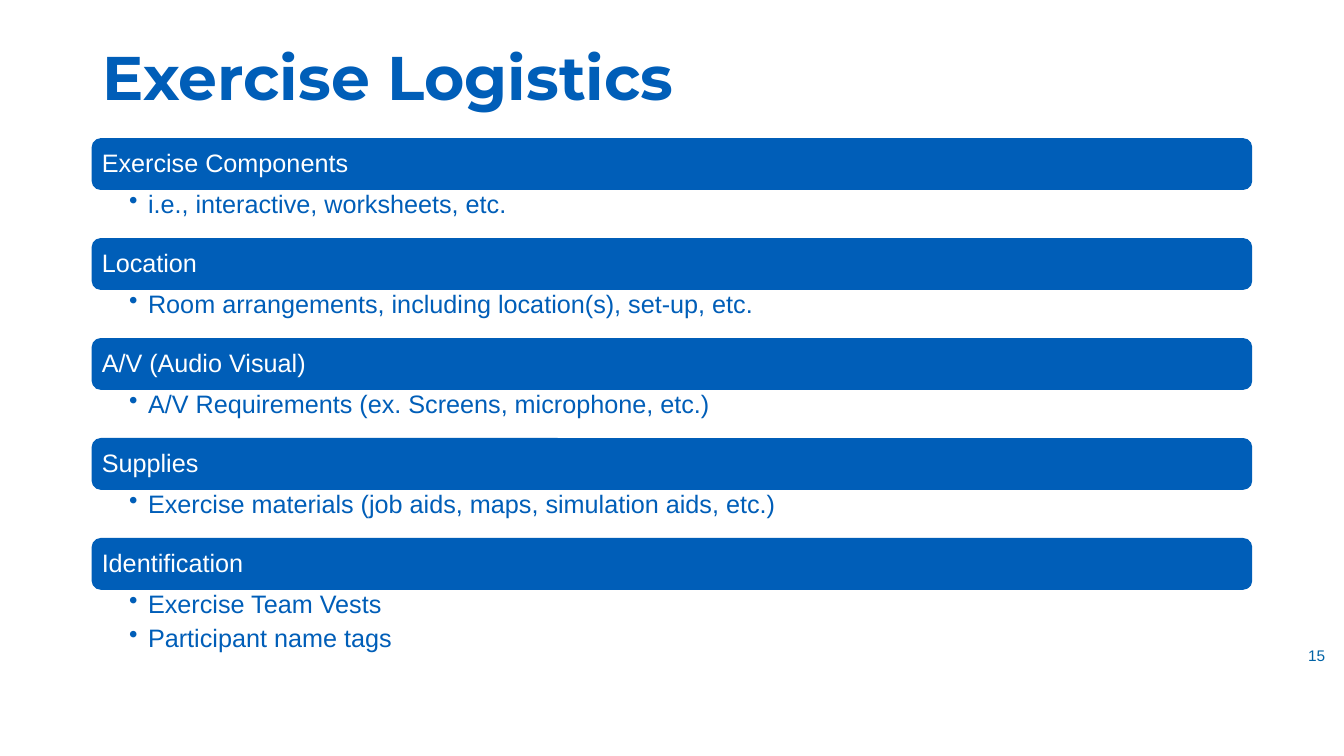
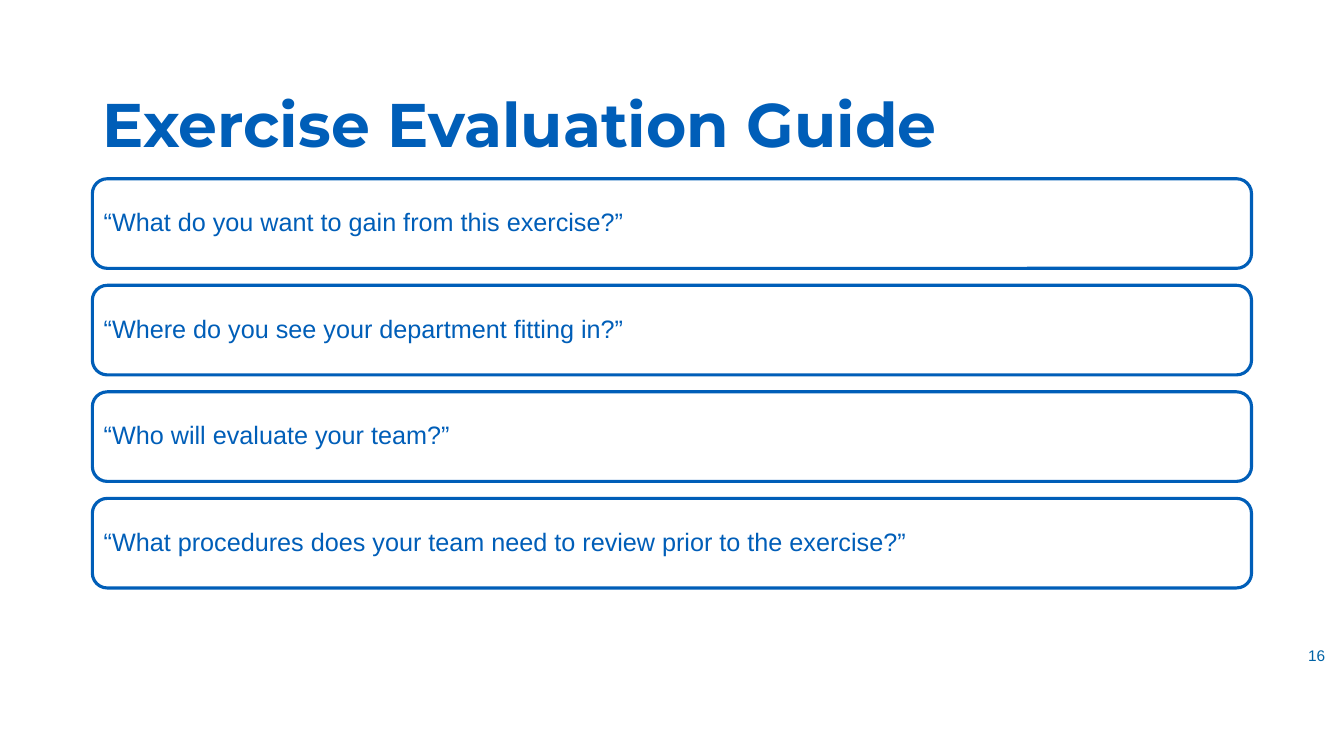
from dataclasses import dataclass

from lxml import etree
from pptx import Presentation
from pptx.dml.color import RGBColor
from pptx.enum.shapes import MSO_SHAPE
from pptx.enum.text import MSO_ANCHOR, PP_ALIGN
from pptx.oxml.ns import qn
from pptx.util import Pt

ROUNDED = MSO_SHAPE.ROUNDED_RECTANGLE
TOP, MIDDLE = MSO_ANCHOR.TOP, MSO_ANCHOR.MIDDLE
LEFT, CENTER = PP_ALIGN.LEFT, PP_ALIGN.CENTER


@dataclass(frozen=True)
class Theme:
    """Colours, fonts and type sizes of the deck."""
    blue: RGBColor = RGBColor(0x00, 0x5E, 0xB8)
    number_blue: RGBColor = RGBColor(0x00, 0x63, 0xA6)
    white: RGBColor = RGBColor(0xFF, 0xFF, 0xFF)
    heading_font: str = "Montserrat"
    body_font: str = "Arial"
    title_size: float = 44
    body_size: float = 18
    number_size: float = 11
    line_spacing: float = 0.9


@dataclass(frozen=True)
class Box:
    """A rectangle in points."""
    left: float
    top: float
    width: float
    height: float

    def lengths(self):
        """Return the four lengths in slide units."""
        return Pt(self.left), Pt(self.top), Pt(self.width), Pt(self.height)


THEME = Theme()
PAGE_WIDTH, PAGE_HEIGHT = 960, 540
MARGIN, CONTENT_WIDTH = 66, 828
NUMBER_BOX = Box(921, 454.5, 39, 29)
DEFAULT_INSETS = (7.2, 3.6, 7.2, 3.6)
PANEL_INSETS = (5, 5, 5, 5)
DETAIL_INSETS = (26.3, 2, 10, 2)
BULLET_INDENT = 13.5

LOGISTICS = [
    ("Exercise Components", ["i.e., interactive, worksheets, etc."]),
    ("Location", ["Room arrangements, including location(s), set-up, etc."]),
    ("A/V (Audio Visual)", ["A/V Requirements (ex. Screens, microphone, etc.)"]),
    ("Supplies", ["Exercise materials (job aids, maps, simulation aids, etc.)"]),
    ("Identification", ["Exercise Team Vests", "Participant name tags"]),
]
QUESTIONS = [
    "“What do you want to gain from this exercise?”",
    "“Where do you see your department fitting in?”",
    "“Who will evaluate your team?”",
    "“What procedures does your team need to review prior to the exercise?”",
]


def add_bullet(paragraph):
    """Give a paragraph a hanging round bullet."""
    properties = paragraph._p.get_or_add_pPr()
    properties.set("marL", str(Pt(BULLET_INDENT)))
    properties.set("indent", str(-Pt(BULLET_INDENT)))
    etree.SubElement(properties, qn("a:buChar")).set("char", "•")


def write(shape, lines, color, size=THEME.body_size, font=THEME.body_font, bold=False,
          anchor=MIDDLE, align=LEFT, insets=DEFAULT_INSETS, bulleted=False):
    """Fill a shape with evenly styled paragraphs."""
    frame = shape.text_frame
    frame.word_wrap = True
    frame.vertical_anchor = anchor
    (frame.margin_left, frame.margin_top,
     frame.margin_right, frame.margin_bottom) = map(Pt, insets)
    for index, line in enumerate(lines):
        paragraph = frame.paragraphs[0] if index == 0 else frame.add_paragraph()
        if bulleted:
            add_bullet(paragraph)
            paragraph.space_after = Pt(5)
        paragraph.alignment = align
        paragraph.line_spacing = THEME.line_spacing
        run = paragraph.add_run()
        run.text = line
        run.font.name = font
        run.font.size = Pt(size)
        run.font.bold = bold
        run.font.color.rgb = color


def add_frame(deck, title, title_box, number):
    """Add a slide with its title and page number."""
    slide = deck.slides.add_slide(deck.slide_layouts[6])
    write(slide.shapes.add_textbox(*title_box.lengths()), [title], THEME.blue,
          THEME.title_size, THEME.heading_font, bold=True)
    write(slide.shapes.add_textbox(*NUMBER_BOX.lengths()), [str(number)],
          THEME.number_blue, THEME.number_size, align=CENTER)
    return slide


def add_panel(slide, box, text, fill, text_color, line_width):
    """Draw a rounded panel holding one line of text."""
    panel = slide.shapes.add_shape(ROUNDED, *box.lengths())
    panel.shadow.inherit = False
    panel.fill.solid()
    panel.fill.fore_color.rgb = fill
    panel.line.color.rgb = THEME.blue
    panel.line.width = Pt(line_width)
    write(panel, [text], text_color, insets=PANEL_INSETS)


def add_topic(slide, box, heading, details, bar_height=36):
    """Draw a heading bar with its bulleted details below."""
    bar = Box(box.left, box.top, box.width, bar_height)
    add_panel(slide, bar, heading, THEME.blue, THEME.white, 1)
    detail_box = Box(box.left, box.top + bar_height - 0.5, box.width,
                     box.height - bar_height)
    write(slide.shapes.add_textbox(*detail_box.lengths()), details, THEME.blue,
          anchor=TOP, insets=DETAIL_INSETS, bulleted=True)


def build_logistics(deck):
    """Build the slide of logistics topics."""
    slide = add_frame(deck, "Exercise Logistics",
                      Box(MARGIN, 19.4, CONTENT_WIDTH, 77), 15)
    top, pitch = 99.2, 71.4
    for row, (heading, details) in enumerate(LOGISTICS):
        box = Box(MARGIN, top + row * pitch, CONTENT_WIDTH, pitch)
        add_topic(slide, box, heading, details)


def build_evaluation(deck):
    """Build the slide of evaluation questions."""
    slide = add_frame(deck, "Exercise Evaluation Guide",
                      Box(MARGIN, 38.9, CONTENT_WIDTH, 104.4), 16)
    top, pitch, height = 127.7, 76.1, 64
    for row, question in enumerate(QUESTIONS):
        box = Box(MARGIN, top + row * pitch, CONTENT_WIDTH, height)
        add_panel(slide, box, question, THEME.white, THEME.blue, 2.25)


def main():
    """Build and save the deck."""
    deck = Presentation()
    deck.slide_width, deck.slide_height = Pt(PAGE_WIDTH), Pt(PAGE_HEIGHT)
    build_logistics(deck)
    build_evaluation(deck)
    deck.save("out.pptx")


if __name__ == "__main__":
    main()
